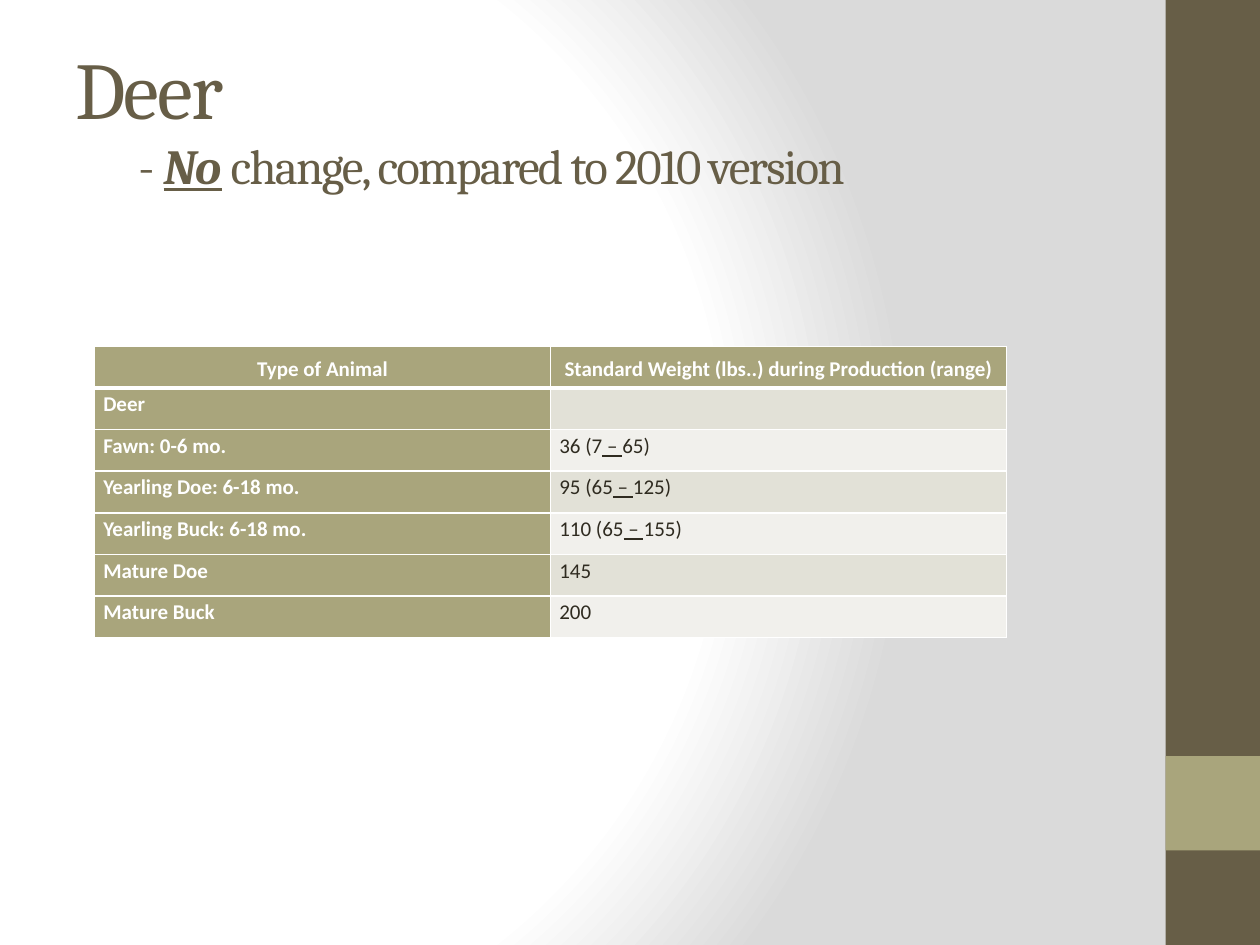
from lxml.etree import SubElement
from pptx import Presentation
from pptx.dml.color import RGBColor
from pptx.enum.shapes import MSO_SHAPE as Shape
from pptx.enum.text import MSO_ANCHOR as Anchor, PP_ALIGN as Align
from pptx.oxml import parse_xml
from pptx.oxml.ns import nsdecls, qn
from pptx.util import Inches, Pt

COLORS = {
    "white": "FFFFFF", "grey": "DADADA", "brown": "675E47", "olive": "A9A57C",
    "ink": "2F2B20", "band_dark": "E2E1D7", "band_light": "F1F0EC",
}
HEADERS = ["Type of Animal", "Standard Weight (lbs..) during Production (range)"]
WEIGHTS = [
    ("Deer", []),
    ("Fawn: 0-6 mo.", ["36 (7", "65)"]),
    ("Yearling Doe: 6-18 mo.", ["95 (65", "125)"]),
    ("Yearling Buck: 6-18 mo.", ["110 (65", "155)"]),
    ("Mature Doe", ["145"]),
    ("Mature Buck", ["200"]),
]
TITLE = {"name": "Cambria", "size": Pt(46), "color": "brown"}
SUBTITLE = TITLE | {"size": Pt(28)}
LABEL = {"name": "Calibri", "size": Pt(12), "color": "white", "bold": True}
VALUE = LABEL | {"color": "ink", "bold": False}
DASH = VALUE | {"underline": True}


class DeckStyle:
    def __init__(self, slide):
        self.slide = slide

    def rgb(self, color):
        return RGBColor.from_string(COLORS[color])

    def background(self, stops, left, top, right, bottom):
        """Fill the slide with a circular gradient; all numbers are percentages."""
        bg = parse_xml(
            f'<p:bg {nsdecls("p", "a")}><p:bgPr><a:gradFill rotWithShape="1"><a:gsLst/>'
            f'<a:path path="circle"><a:fillToRect l="{left * 1000}" t="{top * 1000}" '
            f'r="{right * 1000}" b="{bottom * 1000}"/></a:path></a:gradFill>'
            '<a:effectLst/></p:bgPr></p:bg>')
        stop_list = bg.find(".//" + qn("a:gsLst"))
        for position, color in stops:
            stop = SubElement(stop_list, qn("a:gs"), pos=str(position * 1000))
            SubElement(stop, qn("a:srgbClr"), val=COLORS[color])
        self.slide.element.cSld.insert(0, bg)

    def block(self, left, top, width, height, color):
        block = self.slide.shapes.add_shape(
            Shape.RECTANGLE, Inches(left), Inches(top), Inches(width), Inches(height))
        block.shadow.inherit = False
        block.fill.solid()
        block.fill.fore_color.rgb = self.rgb(color)
        block.line.fill.background()

    def run(self, paragraph, text, style):
        run = paragraph.add_run()
        run.text = text
        for key, value in style.items():
            if key == "color":
                run.font.color.rgb = self.rgb(value)
            else:
                setattr(run.font, key, value)
        return run

    def title(self, left, top, width, height, lines, spacing):
        """Write lines of (text, style) runs, with letter spacing in points."""
        box = self.slide.shapes.add_textbox(
            Inches(left), Inches(top), Inches(width), Inches(height))
        frame = box.text_frame
        frame.word_wrap = True
        frame.vertical_anchor = Anchor.MIDDLE
        paragraph = frame.paragraphs[0]
        for number, line in enumerate(lines):
            if number:
                paragraph.add_line_break()
            for text, style in line:
                run = self.run(paragraph, text, style)
                run.font._element.set("spc", str(spacing * 100))

    def borders(self, cell, widths):
        """Draw white cell borders, widths in points by side (L, R, T, B)."""
        properties = cell._tc.get_or_add_tcPr()
        for index, (side, width) in enumerate(widths.items()):
            properties.insert(index, parse_xml(
                f'<a:ln{side} {nsdecls("a")} w="{Pt(width)}"><a:solidFill>'
                f'<a:srgbClr val="{COLORS["white"]}"/></a:solidFill></a:ln{side}>'))

    def cell(self, cell, runs, fill, header=False, below_header=False):
        margins = {"margin_left": 0.07, "margin_right": 0.07,
                   "margin_top": 0, "margin_bottom": 0}
        for side, value in margins.items():
            setattr(cell, side, Inches(value))
        cell.vertical_anchor = Anchor.MIDDLE if header else Anchor.TOP
        cell.fill.solid()
        cell.fill.fore_color.rgb = self.rgb(fill)
        paragraph = cell.text_frame.paragraphs[0]
        paragraph.line_spacing = 1.15
        paragraph.alignment = Align.CENTER if header else Align.LEFT
        for text, style in runs:
            self.run(paragraph, text, style)
        self.borders(cell, {"L": 1, "R": 1, "T": 3 if below_header else 1,
                            "B": 3 if header else 1})

    def weight_table(self, left, top, column_width, row_height):
        row_count = len(WEIGHTS) + 1
        table = self.slide.shapes.add_table(
            row_count, len(HEADERS), Inches(left), Inches(top),
            Inches(column_width * len(HEADERS)), Inches(row_height * row_count)).table
        for column in table.columns:
            column.width = Inches(column_width)
        for row in table.rows:
            row.height = Inches(row_height)
        for column, heading in enumerate(HEADERS):
            self.cell(table.cell(0, column), [(heading, LABEL)], "olive", header=True)
        for row, (animal, limits) in enumerate(WEIGHTS, 1):
            weight = [(limit, VALUE) for limit in limits]
            if len(weight) == 2:
                weight.insert(1, (" – ", DASH))
            band = "band_dark" if row % 2 else "band_light"
            first = row == 1
            self.cell(table.cell(row, 0), [(animal, LABEL)], "olive", below_header=first)
            self.cell(table.cell(row, 1), weight, band, below_header=first)


def main():
    deck = Presentation()
    deck.slide_width, deck.slide_height = Inches(10), Inches(7.5)
    style = DeckStyle(deck.slides.add_slide(deck.slide_layouts[6]))
    style.background([(0, "white"), (75, "white"), (100, "grey")], 20, 50, 100, 50)
    style.block(9.25, 0, 0.75, 7.5, "brown")
    style.block(9.25, 6, 0.75, 0.75, "olive")
    emphasis = SUBTITLE | {"bold": True, "italic": True, "underline": True}
    style.title(0.5, 0.3, 8.33, 1.25, [
        [("Deer", TITLE)],
        [("\t- ", SUBTITLE), ("No", emphasis),
         (" change, compared to 2010 version", SUBTITLE)],
    ], spacing=-1)
    style.weight_table(0.75, 2.75, 3.62, 0.33)
    deck.save("out.pptx")


if __name__ == "__main__":
    main()
